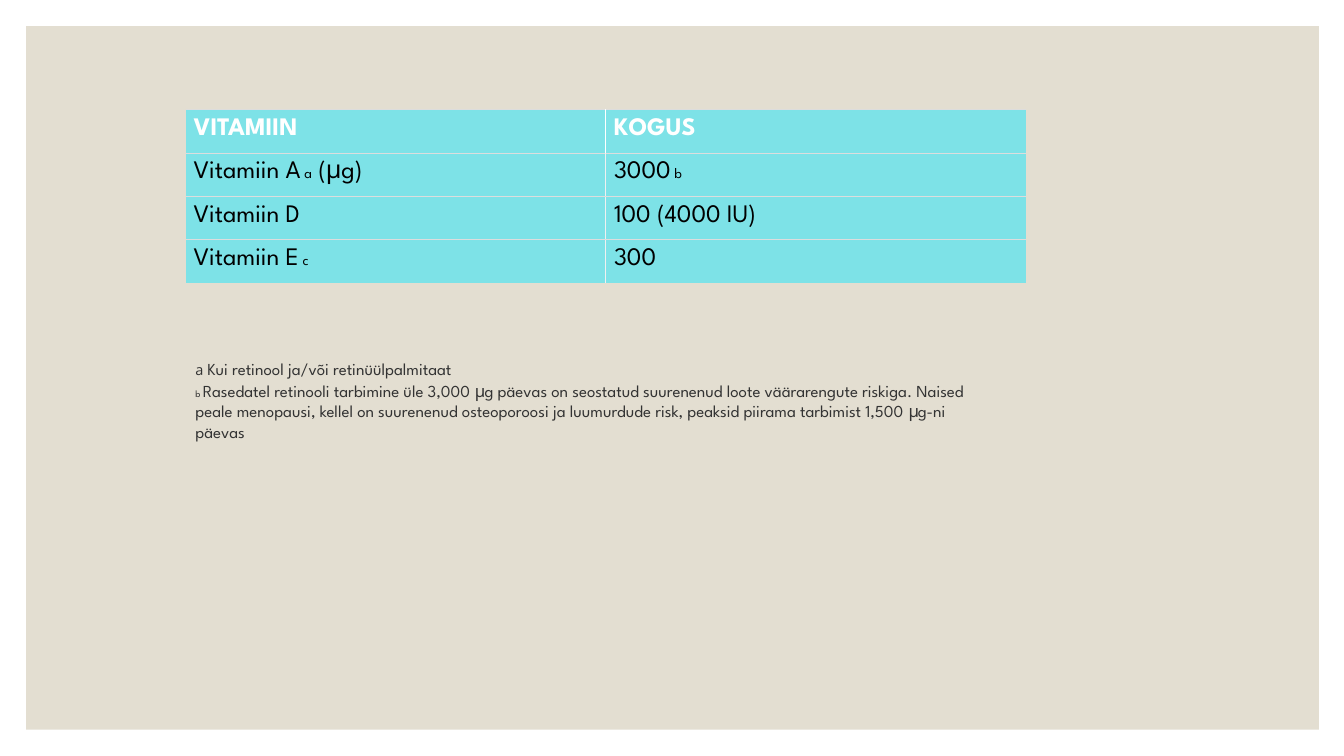
import pptx
import pptx.util
import pptx.dml.color
import pptx.enum.shapes
import pptx.enum.text
import pptx.oxml
import pptx.oxml.ns

Inches = pptx.util.Inches
COLORS = {
    "panel": "E3DED1",
    "cell": "7DE2E7",
    "head": "FFFFFF",
    "body": "000000",
    "note": "333333",
    "row": "DDDDDD",
    "col": "F0F0F0",
}


def rgb(name):
    return pptx.dml.color.RGBColor.from_string(COLORS[name])


def add_run(para, text, color, size=18, name="League Spartan", bold=False, base=0):
    run = para.add_run()
    run.text = text
    form = {"size": pptx.util.Pt(size), "name": name, "bold": bold}
    for key, value in form.items():
        setattr(run.font, key, value)
    run.font.color.rgb = rgb(color)
    if base:
        run._r.get_or_add_rPr().set("baseline", str(base))


deck = pptx.Presentation()
deck.slide_width = Inches(13.33)
deck.slide_height = Inches(7.5)
slide = deck.slides.add_slide(deck.slide_layouts[6])

panel = slide.shapes.add_shape(
    pptx.enum.shapes.MSO_SHAPE.RECTANGLE,
    Inches(0.26), Inches(0.26), Inches(12.82), Inches(6.98),
)
panel.shadow.inherit = False
panel.fill.solid()
panel.fill.fore_color.rgb = rgb("panel")
panel.line.fill.background()

rows = [
    [[("VITAMIIN", 0)], [("KOGUS", 0)]],
    [[("Vitamiin A", 0), (" a", 30), (" (μg)", 0)], [("3000", 0), (" b", 30)]],
    [[("Vitamiin D", 0)], [("100 (4000 IU)", 0)]],
    [[("Vitamiin E", 0), (" c", 30)], [("300", 0)]],
]
table = slide.shapes.add_table(
    len(rows), 2, Inches(1.84), Inches(1.09), Inches(8.34), Inches(0.43 * len(rows))
).table
for col in table.columns:
    col.width = Inches(4.17)

inset = Inches(0.08)
sides = ("margin_left", "margin_top", "margin_right", "margin_bottom")
for r, row in enumerate(rows):
    table.rows[r].height = Inches(0.43)
    tone = "head" if r == 0 else "body"
    rule = "head" if r == 0 else "col"
    for c, parts in enumerate(row):
        cell = table.cell(r, c)
        for side in sides:
            setattr(cell, side, inset)
        for text, base in parts:
            add_run(cell.text_frame.paragraphs[0], text, tone, bold=r == 0, base=base)
        edges = {
            "lnL": rule if c == 1 else None,
            "lnR": rule if c == 0 else None,
            "lnT": "row",
            "lnB": "row" if r < len(rows) - 1 else None,
        }
        props = cell._tc.get_or_add_tcPr()
        for tag, color in edges.items():
            fill = "<a:noFill/>"
            if color:
                fill = f'<a:solidFill><a:srgbClr val="{COLORS[color]}"/></a:solidFill>'
            props.append(pptx.oxml.parse_xml(
                f'<a:{tag} {pptx.oxml.ns.nsdecls("a")} w="9525">{fill}</a:{tag}>'
            ))
        cell.fill.solid()
        cell.fill.fore_color.rgb = rgb("cell")

note = slide.shapes.add_textbox(Inches(1.84), Inches(3.43), Inches(8.16), Inches(1.01))
frame = note.text_frame
frame.word_wrap = True
frame.auto_size = pptx.enum.text.MSO_AUTO_SIZE.SHAPE_TO_FIT_TEXT
para = frame.paragraphs[0]
add_run(para, "a ", "note", name="Open Sans", base=30)
add_run(para, "Kui retinool ja/või retinüülpalmitaat", "note", size=12)
para.add_line_break()
add_run(para, "b ", "note", size=12, base=30)
add_run(
    para,
    "Rasedatel retinooli tarbimine üle 3,000 μg päevas on seostatud suurenenud "
    "loote väärarengute riskiga. Naised peale menopausi, kellel on suurenenud "
    "osteoporoosi ja luumurdude risk, peaksid piirama tarbimist 1,500 μg-ni päevas",
    "note", size=12,
)

deck.save("out.pptx")
